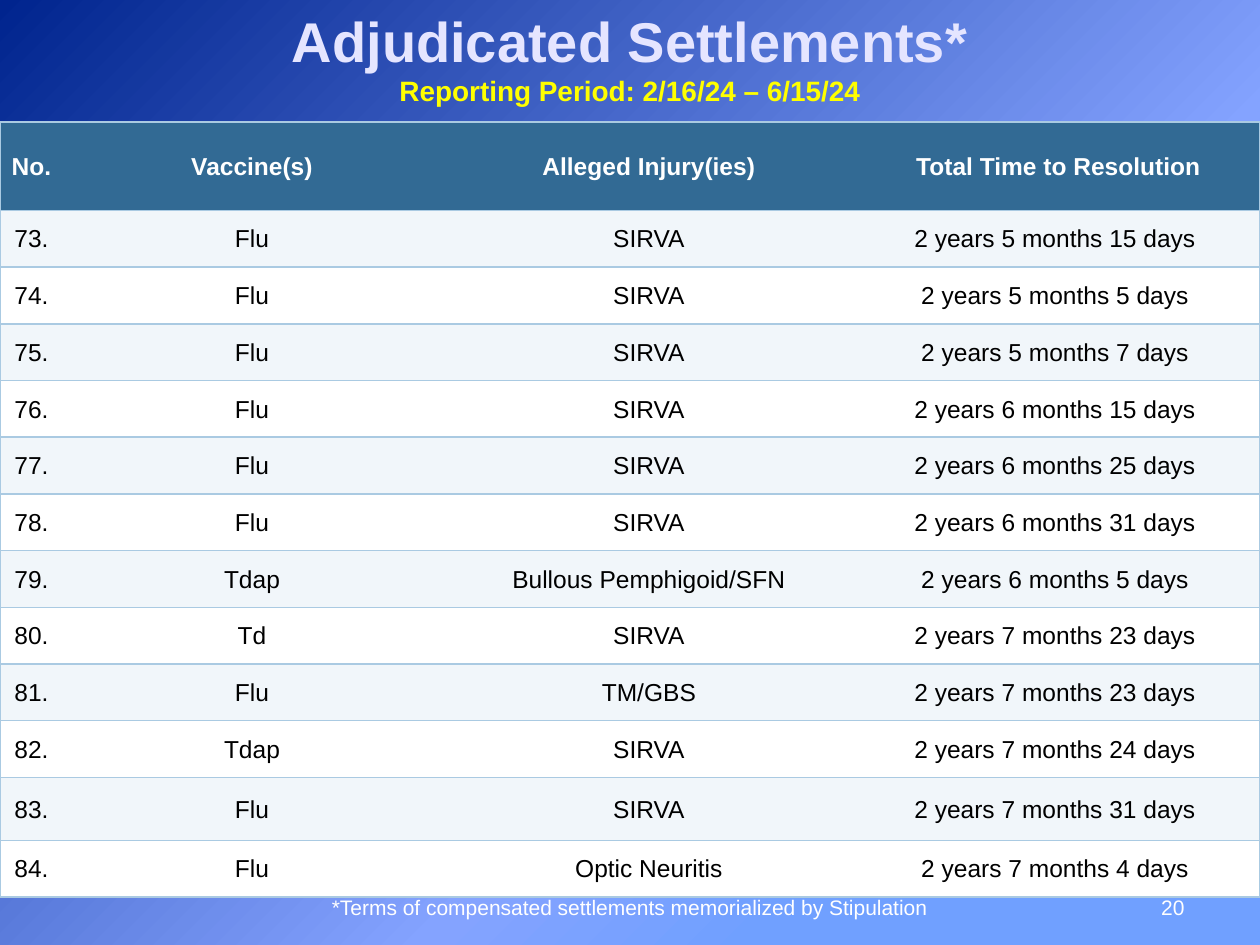
from pptx import Presentation
from pptx.dml.color import RGBColor
from pptx.enum.text import MSO_ANCHOR, PP_ALIGN
from pptx.oxml import parse_xml
from pptx.oxml.ns import nsdecls, qn
from pptx.util import Pt

WHITE = RGBColor(0xFF, 0xFF, 0xFF)
BLACK = RGBColor(0x00, 0x00, 0x00)
YELLOW = RGBColor(0xFF, 0xFF, 0x00)
LAVENDER = RGBColor(0xE5, 0xE5, 0xFF)
HEADER_BLUE = RGBColor(0x32, 0x6A, 0x94)
BAND_BLUE = RGBColor(0xF1, 0xF6, 0xFA)
BORDER_BLUE = RGBColor(0xAA, 0xCA, 0xE2)
NAVY = RGBColor(0x00, 0x24, 0x8E)
PERIWINKLE = RGBColor(0x84, 0xA3, 0xFF)
SKY = RGBColor(0x70, 0xA0, 0xFF)

NO_STYLE = "{2D5ABB26-0587-4C30-8999-92F81FD0307C}"
HEADINGS = ("No.", "Vaccine(s)", "Alleged Injury(ies)", "Total Time to Resolution")
FIRST_NUMBER = 73
SETTLEMENTS = [
    ("Flu", "SIRVA", "2 years 5 months 15 days "),
    ("Flu", "SIRVA", "2 years 5 months 5 days "),
    ("Flu", "SIRVA", "2 years 5 months 7 days "),
    ("Flu", "SIRVA", "2 years 6 months 15 days "),
    ("Flu", "SIRVA", "2 years 6 months 25 days "),
    ("Flu", "SIRVA", "2 years 6 months 31 days "),
    ("Tdap", "Bullous Pemphigoid/SFN", "2 years 6 months 5 days "),
    ("Td", "SIRVA", "2 years 7 months 23 days "),
    ("Flu", "TM/GBS", "2 years 7 months 23 days "),
    ("Tdap", "SIRVA", "2 years 7 months 24 days "),
    ("Flu", "SIRVA", "2 years 7 months 31 days "),
    ("Flu", "Optic Neuritis", "2 years 7 months 4 days "),
]
COLUMN_WIDTHS = (36, 216, 237.6, 230.4)
ROW_HEIGHTS = [50.4] + [32.4] * 10 + [36, 32.4]


class SlideBuilder:
    font_name = "Arial"

    def __init__(self, slide):
        self.slide = slide

    def style(self, font, size, color, bold=False):
        font.name = self.font_name
        font.size = Pt(size)
        font.bold = bold
        font.color.rgb = color

    def background(self, stops):
        stop_xml = "".join(
            f'<a:gs pos="{percent * 1000}"><a:srgbClr val="{color}"/></a:gs>'
            for percent, color in stops
        )
        background = parse_xml(
            f'<p:bg {nsdecls("p", "a")}><p:bgPr><a:gradFill rotWithShape="0">'
            f'<a:gsLst>{stop_xml}</a:gsLst><a:path path="circle">'
            '<a:fillToRect r="100000" b="100000"/></a:path></a:gradFill>'
            "<a:effectLst/></p:bgPr></p:bg>"
        )
        self.slide.element.cSld.insert(0, background)

    def text_box(self, left, top, width, height, anchor, alignment):
        shape = self.slide.shapes.add_textbox(Pt(left), Pt(top), Pt(width), Pt(height))
        shape.text_frame.word_wrap = True
        shape.text_frame.vertical_anchor = anchor
        paragraph = shape.text_frame.paragraphs[0]
        paragraph.alignment = alignment
        return paragraph

    def title(self, heading, period):
        paragraph = self.text_box(0, 0, 720, 64.8, MSO_ANCHOR.MIDDLE, PP_ALIGN.CENTER)
        run = paragraph.add_run()
        run.text = heading
        self.style(run.font, 32, LAVENDER, True)
        paragraph.add_line_break()
        run = paragraph.add_run()
        run.text = period
        self.style(run.font, 16, YELLOW, True)

    def footer(self, text, left, top, width, height, alignment):
        paragraph = self.text_box(left, top, width, height, MSO_ANCHOR.BOTTOM, alignment)
        paragraph.text = text
        self.style(paragraph.font, 12, WHITE)

    def borders(self, cell, sides):
        properties = cell._tc.get_or_add_tcPr()
        for position, side in enumerate(sides):
            properties.insert(position, parse_xml(
                f'<a:ln{side} {nsdecls("a")} w="{Pt(1)}"><a:solidFill>'
                f'<a:srgbClr val="{BORDER_BLUE}"/></a:solidFill></a:ln{side}>'
            ))

    def cell(self, cell, text, fill, color, bold):
        cell.margin_left = cell.margin_right = cell.margin_top = Pt(0.72)
        cell.margin_bottom = Pt(0)
        cell.vertical_anchor = MSO_ANCHOR.MIDDLE
        cell.fill.solid()
        cell.fill.fore_color.rgb = fill
        paragraph = cell.text_frame.paragraphs[0]
        paragraph.text = text
        paragraph.alignment = PP_ALIGN.CENTER
        self.style(paragraph.font, 14, color, bold)

    def table(self, left, top, rows, widths, heights):
        table = self.slide.shapes.add_table(
            len(rows), len(widths), Pt(left), Pt(top), Pt(sum(widths)), Pt(sum(heights))
        ).table
        table._tbl.tblPr.find(qn("a:tableStyleId")).text = NO_STYLE
        for column, width in zip(table.columns, widths):
            column.width = Pt(width)
        for row, height in zip(table.rows, heights):
            row.height = Pt(height)
        last = len(widths) - 1
        for row_index, texts in enumerate(rows):
            header = row_index == 0
            band = BAND_BLUE if row_index % 2 else WHITE
            for column_index, text in enumerate(texts):
                cell = table.cell(row_index, column_index)
                self.cell(cell, text, HEADER_BLUE if header else band,
                          WHITE if header else BLACK, header)
                outer = {0: "L", last: "R"}.get(column_index, "")
                self.borders(cell, outer + "TB")


def main():
    presentation = Presentation()
    presentation.slide_width = Pt(720)
    presentation.slide_height = Pt(540)
    builder = SlideBuilder(presentation.slides.add_slide(presentation.slide_layouts[6]))
    builder.background([(0, NAVY), (62, PERIWINKLE), (77, SKY)])
    builder.title("Adjudicated Settlements*", "Reporting Period: 2/16/24 – 6/15/24")
    builder.footer("20", 516.24, 491.76, 167.76, 37.44, PP_ALIGN.RIGHT)
    builder.footer("*Terms of compensated settlements memorialized by Stipulation",
                   180, 504, 360, 25.2, PP_ALIGN.CENTER)
    rows = [HEADINGS] + [
        (f"{number}.", *settlement)
        for number, settlement in enumerate(SETTLEMENTS, FIRST_NUMBER)
    ]
    builder.table(0, 69.84, rows, COLUMN_WIDTHS, ROW_HEIGHTS)
    presentation.save("out.pptx")


if __name__ == "__main__":
    main()
